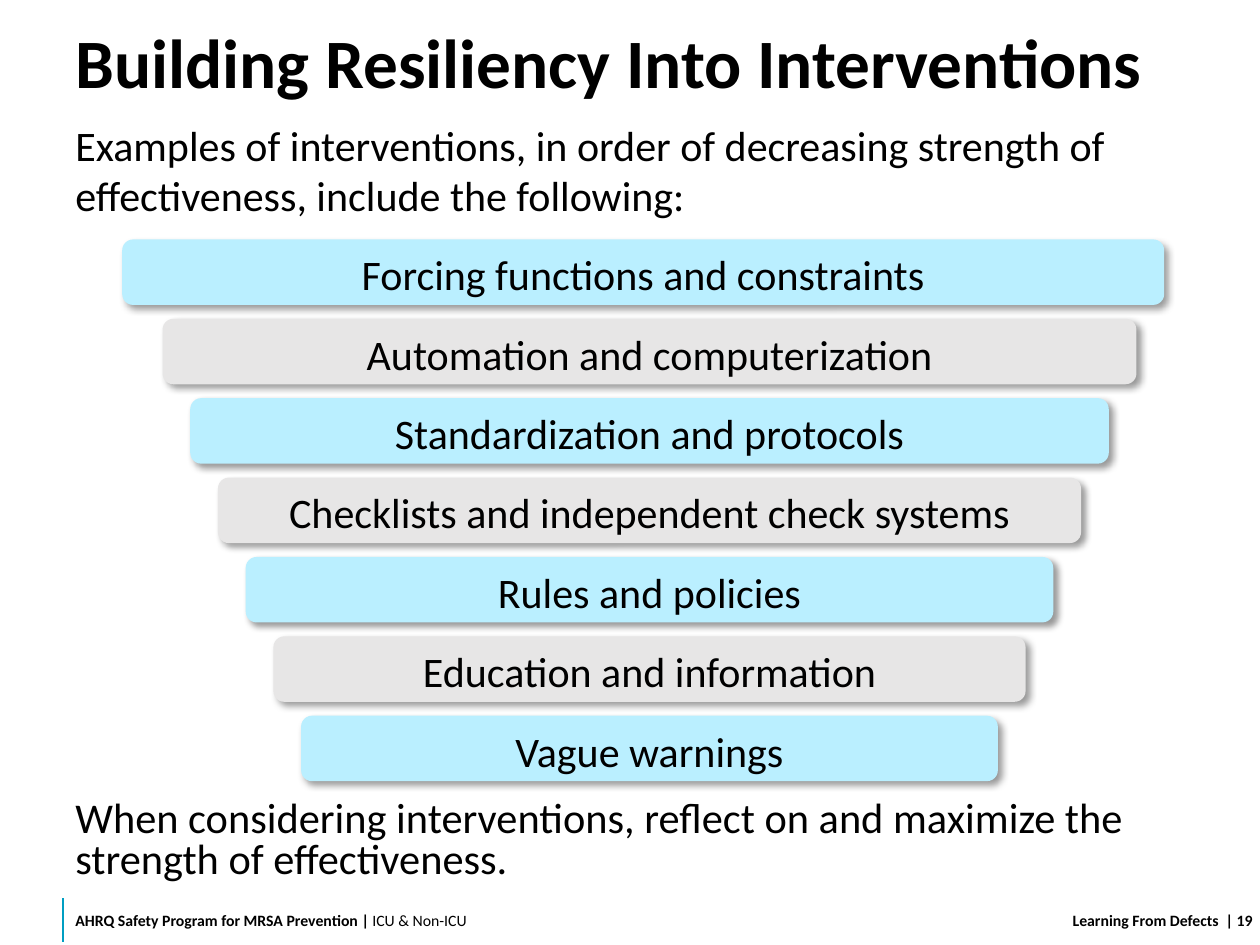
from lxml import etree
from pptx import Presentation
from pptx.dml.color import RGBColor
from pptx.enum import shapes, text
from pptx.oxml import parse_xml
from pptx.oxml.ns import nsdecls
from pptx.util import Inches, Pt

FONT = "Calibri"
HUES = {"ink": "000000", "blue": "BAEFFF", "gray": "E7E6E6", "rule": "009EC2"}
BARS = [
    "Forcing functions and constraints",
    "Automation and computerization",
    "Standardization and protocols",
    "Checklists and independent check systems",
    "Rules and policies",
    "Education and information",
    "Vague warnings",
]
SHADE = f"""<a:effectLst {nsdecls('a')}>
  <a:outerShdw blurRad="{Pt(4)}" dist="{Pt(3)}" dir="2700000" algn="tl" rotWithShape="0">
    <a:srgbClr val="{HUES['ink']}"><a:alpha val="40000"/></a:srgbClr>
  </a:outerShdw>
</a:effectLst>"""


def hue(name):
    return RGBColor.from_string(HUES[name])


def write(shape, runs, size, bold=None, align=text.PP_ALIGN.LEFT, space=1.0,
          anchor=text.MSO_ANCHOR.TOP, pads=(0.1, 0.05, 0.1, 0.05)):
    """Fill a shape with one paragraph; runs are (words, bold) pairs."""
    frame = shape.text_frame
    frame.word_wrap = True
    frame.auto_size = text.MSO_AUTO_SIZE.NONE
    frame.vertical_anchor = anchor
    (frame.margin_left, frame.margin_top,
     frame.margin_right, frame.margin_bottom) = map(Inches, pads)
    para = frame.paragraphs[0]
    para.alignment = align
    para.line_spacing = space
    para.space_before = Pt(0)
    font = para.font
    font.name, font.size, font.bold = FONT, Pt(size), bold
    font.color.rgb = hue("ink")
    for words, heavy in runs:
        run = para.add_run()
        run.text = words
        if heavy is not None:
            run.font.bold = heavy


def label(slide, box, runs, size, **style):
    write(slide.shapes.add_textbox(*map(Inches, box)), runs, size, **style)


def head(slide, box):
    title = slide.shapes.title
    title.left, title.top, title.width, title.height = map(Inches, box)
    write(title, [("Building Resiliency Into Interventions", None)], 39.6,
          bold=True, space=0.9, anchor=text.MSO_ANCHOR.MIDDLE,
          pads=(0.1, 0.1, 0.1, 0.05))


def funnel(slide, box):
    """Stack bars that narrow evenly; the top bar reaches further left."""
    left, top, width, high = box
    pitch, step, extra = 0.63, 0.22, 0.1
    for i, words in enumerate(BARS):
        more = extra if i == 0 else 0
        place = (left + step * i - more, top + pitch * i,
                 width - 2 * step * i + more, high)
        bar = slide.shapes.add_shape(
            shapes.MSO_SHAPE.ROUNDED_RECTANGLE, *map(Inches, place))
        bar.fill.solid()
        bar.fill.fore_color.rgb = hue("gray" if i % 2 else "blue")
        bar.line.fill.background()
        bar._element.spPr.append(parse_xml(SHADE))
        write(bar, [(words, None)], 24, align=text.PP_ALIGN.CENTER)


def foot(slide, box):
    left, top, width, high = box
    right, page = left + width, 0.3
    mid = {"anchor": text.MSO_ANCHOR.MIDDLE}

    # Program name beside the rule
    label(slide, (left, top, 4.1, high),
          [("AHRQ Safety Program for MRSA Prevention | ", True),
           ("ICU & Non-ICU", False)], 9, pads=(0.1, 0, 0.1, 0), **mid)
    rule = slide.shapes.add_connector(
        shapes.MSO_CONNECTOR.STRAIGHT, Inches(left), Inches(top + 0.03),
        Inches(left), Inches(top + 0.38))
    rule.line.color.rgb = hue("rule")
    rule.line.width = Pt(1)
    etree.SubElement(rule._element.spPr,
                     "{http://schemas.openxmlformats.org/drawingml/2006/main}effectLst")

    # Module name and page number
    label(slide, (right - page - 2.6, top, 2.6, high),
          [("Learning From Defects ", None)], 9, bold=True,
          align=text.PP_ALIGN.RIGHT, pads=(0.1, 0.05, 0, 0.05), **mid)
    label(slide, (right - page, top, page, high), [(" | 19", None)], 9,
          bold=True, pads=(0, 0.05, 0, 0.05), **mid)


def main():
    deck = Presentation()
    deck.slide_width, deck.slide_height = Inches(10), Inches(7.5)
    slide = deck.slides.add_slide(deck.slide_layouts[5])

    head(slide, (0.5, 0, 9.2, 1))
    # Lead-in, bars, closing advice
    label(slide, (0.5, 0.9, 9, 1),
          [("Examples of interventions, in order of decreasing strength of "
            "effectiveness, include the following:", None)], 24)
    funnel(slide, (1.07, 1.9, 8.17, 0.52))
    label(slide, (0.5, 6.31, 8.74, 0.8),
          [("When considering interventions, reflect on and maximize the "
            "strength of effectiveness.", None)], 24.2, space=0.8)
    foot(slide, (0.5, 7.1, 9.5, 0.4))

    deck.save("out.pptx")


if __name__ == "__main__":
    main()
